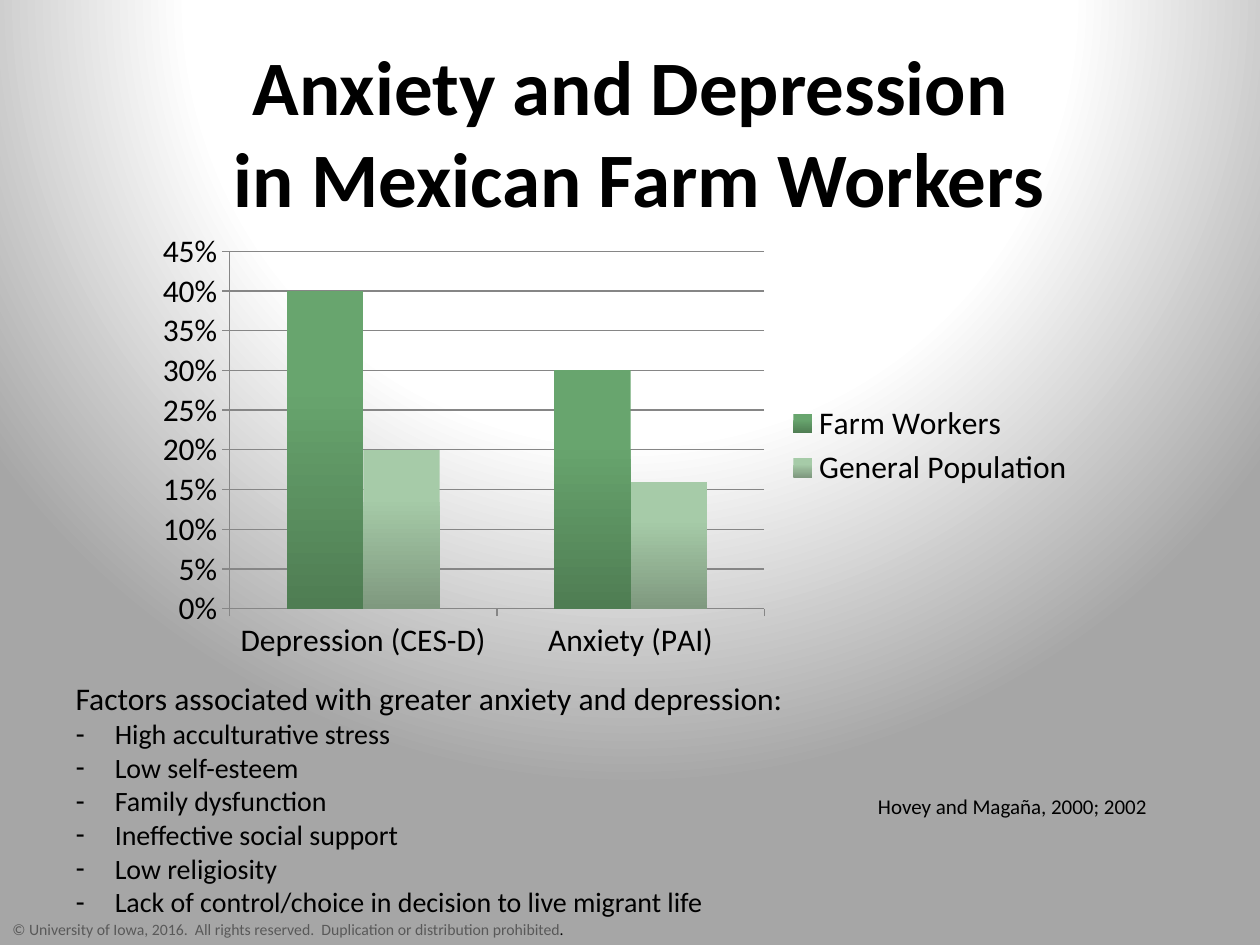
from pptx import Presentation
from pptx.chart.data import CategoryChartData
from pptx.dml.color import RGBColor
from pptx.enum.chart import XL_CHART_TYPE, XL_LEGEND_POSITION, XL_TICK_MARK
from pptx.enum.text import MSO_ANCHOR, MSO_AUTO_SIZE, PP_ALIGN
from pptx.oxml import parse_xml
from pptx.oxml.ns import nsdecls
from pptx.util import Cm, Pt

COLUMN = XL_CHART_TYPE.COLUMN_CLUSTERED
RIGHT = XL_LEGEND_POSITION.RIGHT
OUT = XL_TICK_MARK.OUTSIDE
TOP = MSO_ANCHOR.TOP
FIXED = MSO_AUTO_SIZE.NONE
CENTER = PP_ALIGN.CENTER

FONT = "Calibri"
BLACK = "000000"
GRAY = "595959"
LINE = "868686"
FACTORS = [
    "High acculturative stress",
    "Low self-esteem",
    "Family dysfunction",
    "Ineffective social support",
    "Low religiosity",
    "Lack of control/choice in decision to live migrant life",
]
# name, values, top colour, bottom colour
SERIES = [
    ("Farm Workers", (0.4, 0.3), "68A56E", "4F7D53"),
    ("General Population", (0.2, 0.16), "A6CBA8", "7F997F"),
]


def color(code):
    return RGBColor.from_string(code)


class Deck:
    def __init__(self):
        self.prs = Presentation()
        self.prs.slide_width, self.prs.slide_height = Cm(25.4), Cm(19.05)
        self.slide = self.prs.slides.add_slide(self.prs.slide_layouts[1])

    def style(self, font, size, code=BLACK, bold=False):
        font.name, font.size, font.bold = FONT, Pt(size), bold
        font.color.rgb = color(code)

    def place(self, shape, box):
        shape.left, shape.top, shape.width, shape.height = map(Cm, box)
        frame = shape.text_frame
        frame.auto_size, frame.vertical_anchor = FIXED, TOP
        return frame

    def glow(self, stops):
        """Fill the background with a circle of light from above."""
        marks = "".join(
            f'<a:gs pos="{pos * 1000}"><a:srgbClr val="{code}"/></a:gs>'
            for pos, code in stops
        )
        self.slide.element.cSld.insert(0, parse_xml(
            f'<p:bg {nsdecls("p", "a")}><p:bgPr><a:gradFill rotWithShape="1">'
            f'<a:gsLst>{marks}</a:gsLst><a:path path="circle">'
            '<a:fillToRect l="50000" t="-80000" r="50000" b="180000"/>'
            '</a:path></a:gradFill><a:effectLst/></p:bgPr></p:bg>'
        ))

    def title(self, text, box):
        frame = self.place(self.slide.shapes.title, box)
        frame.text = text
        para = frame.paragraphs[0]
        para.alignment = CENTER
        self.style(para.font, 44, bold=True)

    def list(self, head, items, box):
        frame = self.place(self.slide.placeholders[1], box)
        frame.text = "\n".join([head, *items])
        for i, para in enumerate(frame.paragraphs):
            para.space_before = Pt(0)
            props = para._p.get_or_add_pPr()
            indent = Cm(0.79) if i else 0
            props.set("marL", str(indent))
            props.set("indent", str(-indent))
            mark = '<a:buChar {} char="-"/>' if i else "<a:buNone {}/>"
            props.append(parse_xml(mark.format(nsdecls("a"))))
            self.style(para.font, 16 if i else 18)

    def text(self, runs, size, box, wrap=True):
        """Add one line made of (text, colour) runs."""
        frame = self.place(self.slide.shapes.add_textbox(0, 0, 0, 0), box)
        frame.word_wrap = wrap
        for words, code in runs:
            run = frame.paragraphs[0].add_run()
            run.text = words
            self.style(run.font, size, code)

    def chart(self, cats, series, box):
        data = CategoryChartData(number_format="0%")
        data.categories = cats
        for name, values, *_ in series:
            data.add_series(name, values)
        chart = self.slide.shapes.add_chart(COLUMN, *map(Cm, box), data).chart
        self.style(chart.font, 18)
        chart.has_title = False
        chart.has_legend = True
        chart.legend.position = RIGHT
        chart.legend.include_in_layout = False

        for axis in (chart.category_axis, chart.value_axis):
            axis.major_tick_mark = OUT
            self.rule(axis.format.line)
        scale = chart.value_axis
        scale.minimum_scale, scale.maximum_scale = 0, 0.45
        scale.major_unit = 0.05
        scale.tick_labels.number_format = "0%"
        scale.tick_labels.number_format_is_linked = False
        self.rule(scale.major_gridlines.format.line)

        plot = chart.plots[0]
        plot.gap_width, plot.overlap = 150, 0
        plot.vary_by_categories = False
        for bars, (_, _, light, dark) in zip(plot.series, series):
            fill = bars.format.fill
            fill.gradient()
            fill.gradient_angle = 270
            stops = zip(fill.gradient_stops, (0.3, 1), (light, dark))
            for stop, pos, code in stops:
                stop.position = pos
                stop.color.rgb = color(code)

    def rule(self, line):
        line.color.rgb = color(LINE)
        line.width = Pt(0.75)


def main():
    deck = Deck()
    deck.glow([(0, "FFFFFF"), (56, "FFFFFF"), (100, "A6A6A6")])
    deck.text(
        [("© University of Iowa, 2016.  All rights reserved.  "
          "Duplication or distribution prohibited", GRAY), (".", BLACK)],
        9, (0, 18.42, 15.44, 0.64),
    )
    deck.title("Anxiety and Depression \vin Mexican Farm Workers",
               (1.27, 0.64, 23.24, 2.74))
    deck.chart(["Depression (CES-D)", "Anxiety (PAI)"], SERIES,
               (2.9, 4.5, 19.02, 8.97))
    deck.text([("Hovey and Magaña, 2000; 2002", BLACK)], 12,
              (17.45, 15.88, 5.99, 0.76), wrap=False)
    deck.list("Factors associated with greater anxiety and depression:",
              FACTORS, (1.27, 13.56, 14.99, 5.13))
    deck.prs.save("out.pptx")


if __name__ == "__main__":
    main()
